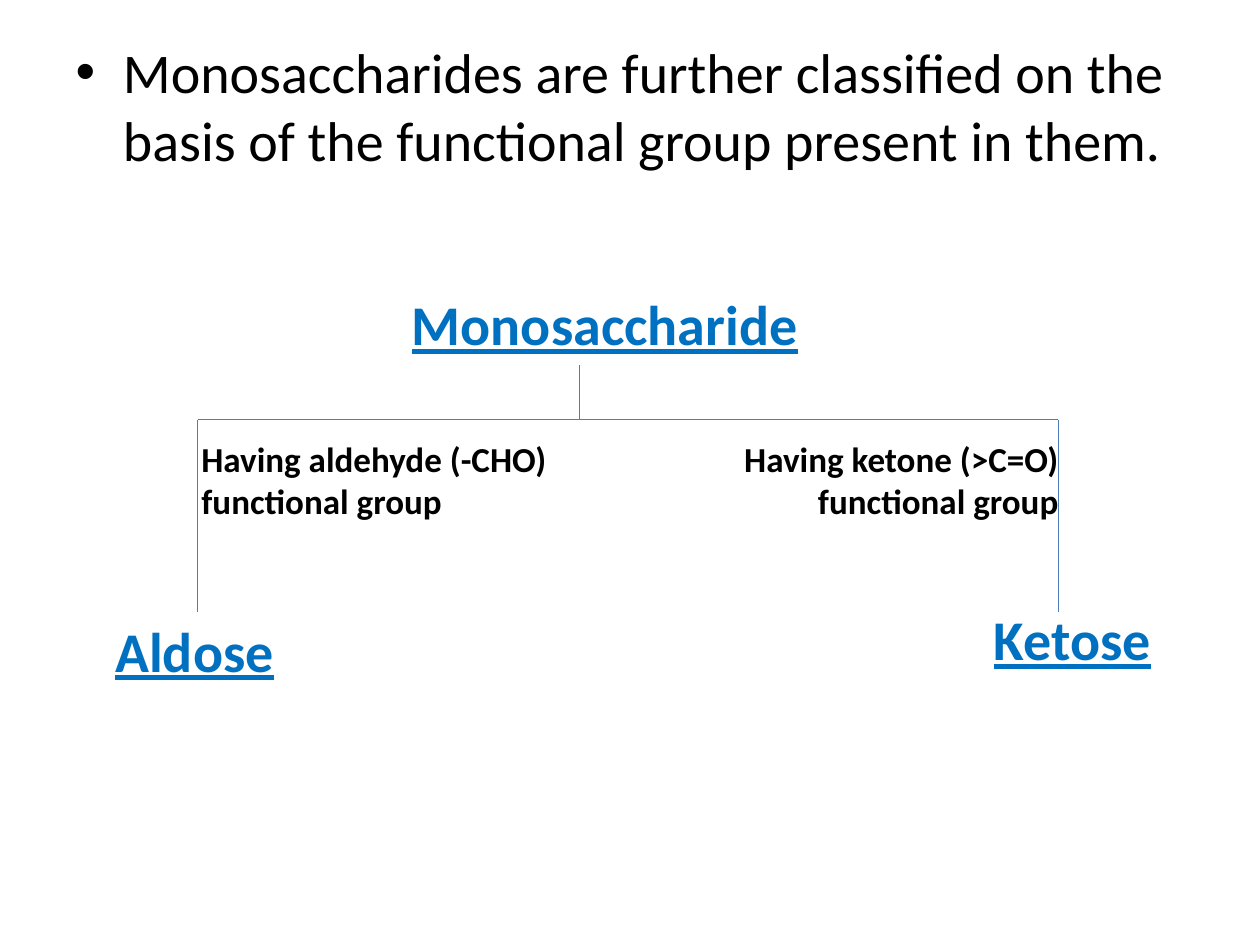
from pptx import Presentation
from pptx.dml.color import RGBColor
from pptx.enum.shapes import MSO_CONNECTOR
from pptx.enum.text import MSO_AUTO_SIZE, PP_ALIGN
from pptx.oxml.ns import qn
from pptx.util import Inches, Pt
from lxml import etree

LEFT, CENTER, RIGHT = PP_ALIGN.LEFT, PP_ALIGN.CENTER, PP_ALIGN.RIGHT
STRAIGHT = MSO_CONNECTOR.STRAIGHT
FIT_SHAPE = MSO_AUTO_SIZE.SHAPE_TO_FIT_TEXT

FONT = "Calibri"
BLACK = RGBColor(0x00, 0x00, 0x00)
HEADING_BLUE = RGBColor(0x00, 0x70, 0xC0)
LINE_BLUE = RGBColor(0x4B, 0x7E, 0xBC)

INTRO = ("Monosaccharides are further classified on the basis of "
         "the functional group present in them.")

# text, (left, top, width, height), alignment, wraps
HEADINGS = [
    ("Monosaccharide", (3.17, 2.25, 3.29, 0.64), LEFT, False),
    ("Aldose", (0.17, 4.84, 2.75, 0.64), CENTER, True),
    ("Ketose", (7.1, 4.75, 2.82, 0.64), CENTER, True),
]
CRITERIA = [
    ("Having aldehyde (-CHO) functional group", (1.5, 3.42, 3.03, 0.77), LEFT, True),
    ("Having ketone (>C=O) functional group", (5.67, 3.42, 2.83, 0.77), RIGHT, True),
]

# Tree geometry in inches
STEM_X, ALDOSE_X, KETOSE_X = 4.6, 1.57, 8.4
STEM_TOP, BRANCH_Y, BRANCH_BOTTOM = 2.9, 3.33, 4.86
TREE_LINES = [
    (ALDOSE_X, BRANCH_Y, KETOSE_X, BRANCH_Y),
    (ALDOSE_X, BRANCH_Y, ALDOSE_X, BRANCH_BOTTOM),
    (KETOSE_X, BRANCH_Y, KETOSE_X, BRANCH_BOTTOM),
    (STEM_X, STEM_TOP, STEM_X, BRANCH_Y),
]


def set_font(paragraph, size, color, bold=False, underline=False):
    font = paragraph.font
    font.name, font.size = FONT, Pt(size)
    font.bold, font.underline = bold, underline
    font.color.rgb = color


def add_label(slide, text, box, alignment, wraps, **font):
    text_frame = slide.shapes.add_textbox(*map(Inches, box)).text_frame
    text_frame.word_wrap = wraps
    text_frame.auto_size = FIT_SHAPE
    paragraph = text_frame.paragraphs[0]
    paragraph.text = text
    paragraph.alignment = alignment
    set_font(paragraph, **font)


def add_line(slide, ends):
    connector = slide.shapes.add_connector(STRAIGHT, *map(Inches, ends))
    connector.line.color.rgb = LINE_BLUE
    connector.line.width = Pt(0.75)
    properties = connector._element.spPr
    etree.SubElement(properties, qn("a:effectLst"))


def main():
    presentation = Presentation()
    presentation.slide_width, presentation.slide_height = Inches(10), Inches(7.5)
    slide = presentation.slides.add_slide(presentation.slide_layouts[1])

    title = slide.shapes.title.element
    title.getparent().remove(title)
    body = slide.placeholders[1]
    body.left, body.top = Inches(0.5), Inches(0.25)
    body.width, body.height = Inches(9), Inches(1.33)
    body.text_frame.text = INTRO
    set_font(body.text_frame.paragraphs[0], 32, BLACK)

    for ends in TREE_LINES:
        add_line(slide, ends)
    for heading in HEADINGS:
        add_label(slide, *heading, size=32, color=HEADING_BLUE, bold=True, underline=True)
    for criterion in CRITERIA:
        add_label(slide, *criterion, size=20, color=BLACK, bold=True)

    presentation.save("out.pptx")


if __name__ == "__main__":
    main()
